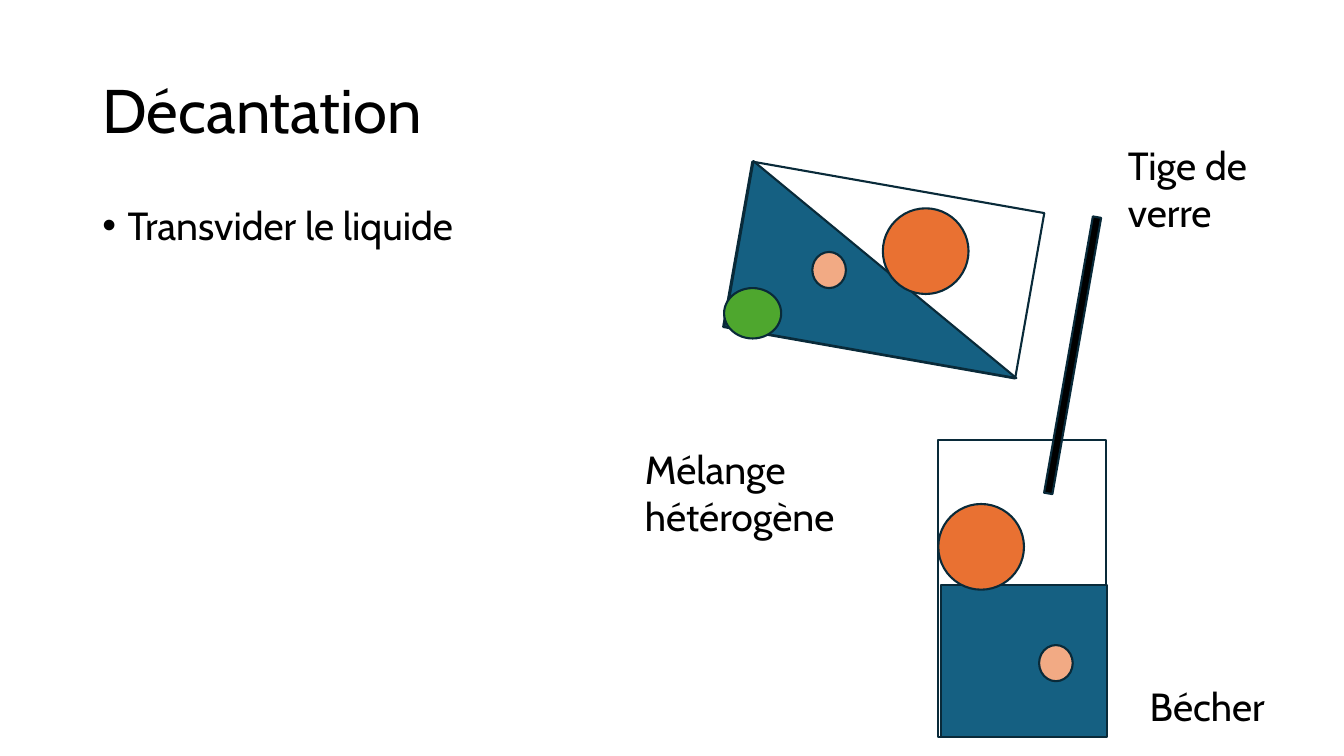
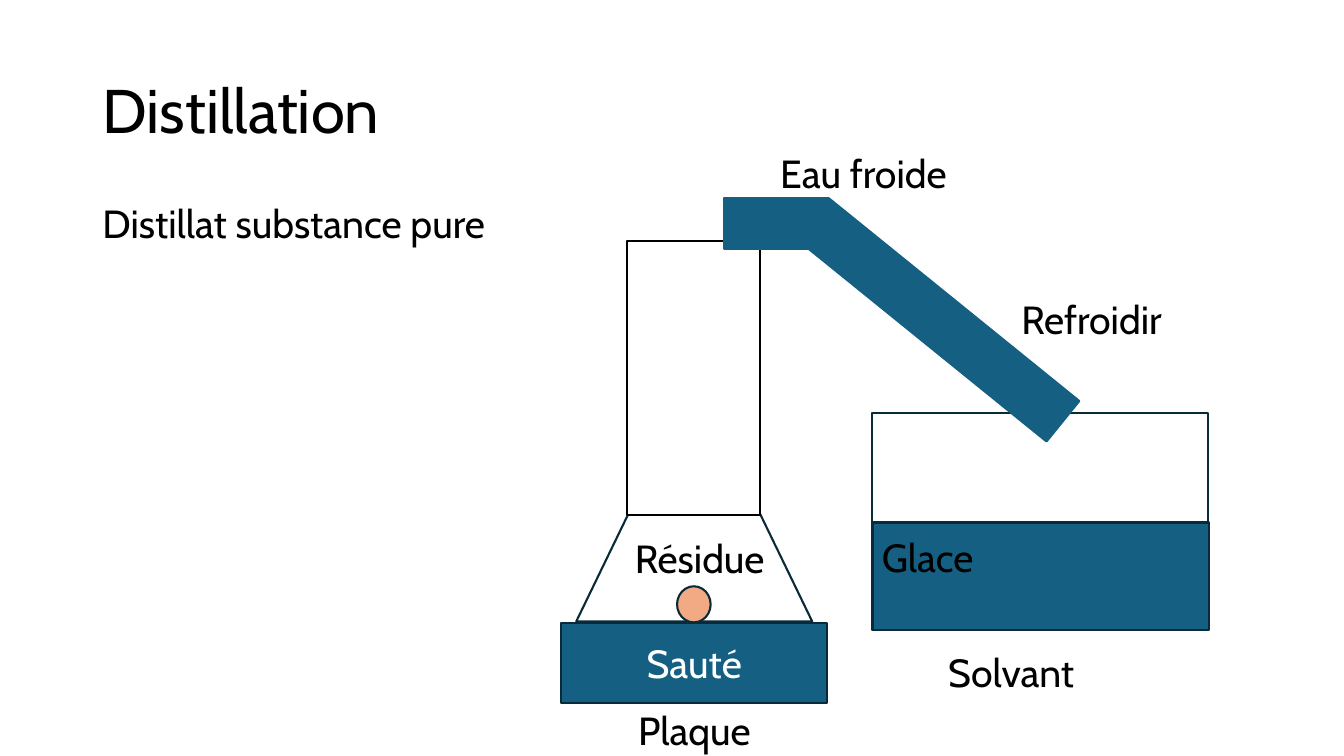
from dataclasses import dataclass

from lxml import etree
from pptx import Presentation
from pptx.dml.color import RGBColor
from pptx.enum.shapes import MSO_SHAPE
from pptx.enum.text import MSO_ANCHOR, MSO_AUTO_SIZE, PP_ALIGN
from pptx.oxml.ns import qn
from pptx.util import Inches, Pt

RECTANGLE = MSO_SHAPE.RECTANGLE
ELLIPSE = MSO_SHAPE.OVAL
TRIANGLE = MSO_SHAPE.ISOSCELES_TRIANGLE
RIGHT_TRIANGLE = MSO_SHAPE.RIGHT_TRIANGLE
MIDDLE, TOP = MSO_ANCHOR.MIDDLE, MSO_ANCHOR.TOP
LEFT, CENTER = PP_ALIGN.LEFT, PP_ALIGN.CENTER
NO_AUTOFIT, GROW = MSO_AUTO_SIZE.NONE, MSO_AUTO_SIZE.SHAPE_TO_FIT_TEXT

# The slide is a grid of 160 columns by 90 rows of square cells.
COLUMNS, ROWS = 160, 90
SLIDE_WIDTH, SLIDE_HEIGHT = Inches(13.333), Inches(7.5)


@dataclass(frozen=True)
class Theme:
    font: str = "Cabin"
    title_size: int = 44
    text_size: int = 28
    line_width: float = 1.5
    line_spacing: float = 0.9
    space_before: int = 10
    bullet_indent: float = 0.25
    black: str = "000000"
    white: str = "FFFFFF"
    outline: str = "092A39"
    liquid: str = "156082"
    orange: str = "E97132"
    green: str = "4EA72E"
    salmon: str = "F2AA84"


THEME = Theme()

# Sizes shared by several parts, in columns and rows
TITLE_BOX = (11, 4.8, 138, 17.4)
BEAKER = (20, 35.3)
BALL = (10.2, 10.2)
GRAIN = (4, 4.3)
LABEL_ROWS = 6.8


def cells(left, top, width, height):
    """Turn columns and rows into slide lengths."""
    column, row = SLIDE_WIDTH / COLUMNS, SLIDE_HEIGHT / ROWS
    return (round(left * column), round(top * row),
            round(width * column), round(height * row))


def colour(value):
    return RGBColor.from_string(value)


# Text
def add_run(paragraph, text, size=THEME.text_size, ink=THEME.black):
    run = paragraph.add_run()
    run.text = text
    run.font.name = THEME.font
    run.font.size = Pt(size)
    run.font.color.rgb = colour(ink)


def fill_placeholder(placeholder, text, box, size, anchor):
    (placeholder.left, placeholder.top,
     placeholder.width, placeholder.height) = cells(*box)
    frame = placeholder.text_frame
    frame.auto_size = NO_AUTOFIT
    frame.vertical_anchor = anchor
    paragraph = frame.paragraphs[0]
    paragraph.alignment = LEFT
    paragraph.line_spacing = THEME.line_spacing
    add_run(paragraph, text, size)
    return paragraph


def set_bullet(paragraph, bullet):
    properties = paragraph._p.get_or_add_pPr()
    indent = Inches(THEME.bullet_indent) if bullet else 0
    properties.set("marL", str(indent))
    properties.set("indent", str(-indent))
    if bullet:
        font = etree.SubElement(properties, qn("a:buFont"))
        font.set("typeface", "Arial")
        etree.SubElement(properties, qn("a:buChar")).set("char", bullet)
    else:
        etree.SubElement(properties, qn("a:buNone"))


def add_content_slide(presentation, title, body, body_box, bullet=None):
    slide = presentation.slides.add_slide(presentation.slide_layouts[1])
    fill_placeholder(slide.shapes.title, title, TITLE_BOX,
                     THEME.title_size, MIDDLE)
    paragraph = fill_placeholder(slide.placeholders[1], body, body_box,
                                 THEME.text_size, TOP)
    paragraph.space_before = Pt(THEME.space_before)
    set_bullet(paragraph, bullet)
    return slide


def add_label(slide, text, left, top, width, height=LABEL_ROWS):
    label = slide.shapes.add_textbox(*cells(left, top, width, height))
    frame = label.text_frame
    frame.word_wrap = True
    frame.auto_size = GROW
    add_run(frame.paragraphs[0], text)


# Apparatus
def add_part(slide, kind, box, fill, line=THEME.outline, rotation=0):
    shape = slide.shapes.add_shape(kind, *cells(*box))
    shape.shadow.inherit = False
    shape.fill.solid()
    shape.fill.fore_color.rgb = colour(fill)
    shape.line.color.rgb = colour(line)
    shape.line.width = Pt(THEME.line_width)
    shape.rotation = rotation
    return shape


def add_ball(slide, left, top):
    add_part(slide, ELLIPSE, (left, top, *BALL), THEME.orange)


def add_grain(slide, left, top):
    add_part(slide, ELLIPSE, (left, top, *GRAIN), THEME.salmon)


def build_decantation(presentation):
    slide = add_content_slide(presentation, "Décantation",
                              "Transvider le liquide", (11, 24, 138, 57.1), "•")
    # Upright beaker, tilted beaker and glass rod
    add_part(slide, RECTANGLE, (111.7, 52.4, *BEAKER), THEME.white)
    add_part(slide, RECTANGLE, (95.2, 14.5, *BEAKER), THEME.white, rotation=100)
    add_part(slide, RECTANGLE, (127.2, 25.6, 1, 33.4), THEME.black, rotation=10)
    # Liquid in each beaker
    add_part(slide, RIGHT_TRIANGLE, (87.7, 22.1, *reversed(BEAKER)),
             THEME.liquid, rotation=10)
    add_part(slide, RECTANGLE, (112, 69.6, 19.8, 18.1), THEME.liquid)
    # Solids
    add_ball(slide, 105.1, 24.8)
    add_part(slide, ELLIPSE, (86.2, 34.3, 6.8, 6), THEME.green)
    add_grain(slide, 96.7, 30)
    add_ball(slide, 111.7, 60)
    add_grain(slide, 123.7, 76.8)
    # Labels
    add_label(slide, "Bécher", 135.7, 80.6, 19.9)
    add_label(slide, "Mélange hétérogène", 75.6, 52.4, 31.2, 12.5)
    add_label(slide, "Tige de verre", 133.1, 16.2, 22.6, 12.5)


def build_distillation(presentation):
    slide = add_content_slide(presentation, "Distillation",
                              "Distillat substance pure", (11, 23.8, 53.3, 10.7))
    # Ice bath
    add_part(slide, RECTANGLE, (103.8, 49.2, 40, 25.8), THEME.white)
    add_part(slide, RECTANGLE, (103.9, 62.2, 40, 12.8), THEME.liquid)
    # Flask on its hot plate
    add_part(slide, TRIANGLE, (68.6, 45, 28.1, 29), THEME.white)
    add_part(slide, RECTANGLE, (74.6, 28.7, 15.9, 32.6), THEME.white,
             THEME.black)
    add_grain(slide, 80.6, 69.8)
    plate = add_part(slide, RECTANGLE, (66.8, 74.2, 31.7, 9.5), THEME.liquid)
    plate.text_frame.vertical_anchor = MIDDLE
    paragraph = plate.text_frame.paragraphs[0]
    paragraph.alignment = CENTER
    add_run(paragraph, "Sauté", ink=THEME.white)
    # Cooling tube
    add_part(slide, RECTANGLE, (92.5, 35, 38.3, 6.2), THEME.liquid,
             THEME.liquid, 39)
    add_part(slide, RECTANGLE, (86.2, 23.6, 12.5, 6), THEME.liquid,
             THEME.liquid)
    # Labels
    for label in (("Solvant", 111.7, 76.6, 41), ("Plaque", 74.8, 83.5, 34.1),
                  ("Glace", 103.8, 62.9, 30.2), ("Résidue", 74.4, 63, 20.2),
                  ("Eau froide", 91.7, 17.2, 24.2),
                  ("Refroidir", 120.4, 34.6, 35.4)):
        add_label(slide, *label)


def main():
    presentation = Presentation()
    presentation.slide_width = SLIDE_WIDTH
    presentation.slide_height = SLIDE_HEIGHT
    build_decantation(presentation)
    build_distillation(presentation)
    presentation.save("out.pptx")


if __name__ == "__main__":
    main()
